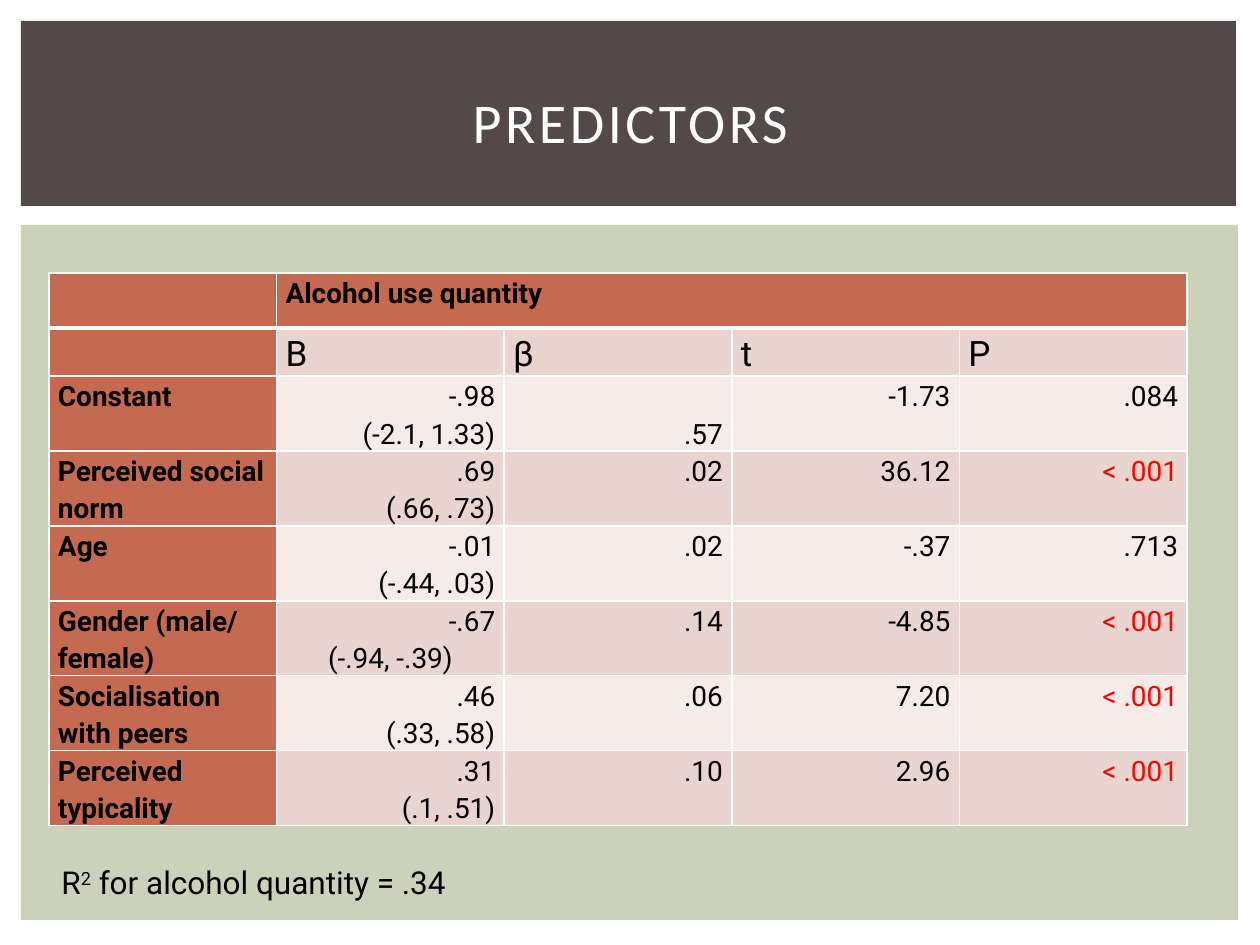
"""Build the slide with the table of predictors of alcohol use quantity."""
from dataclasses import dataclass

import lxml.etree
import pptx
import pptx.dml.color
import pptx.enum.shapes
import pptx.enum.text
import pptx.oxml.ns
import pptx.util

ALIGN = pptx.enum.text.PP_ALIGN
ANCHOR = pptx.enum.text.MSO_ANCHOR
PIXELS_PER_INCH = 126


@dataclass(frozen=True)
class Theme:
    heading_font: str = "Calibri"
    body_font: str = "Roboto"
    title_size: int = 32
    symbol_size: int = 20
    note_size: int = 18
    cell_size: int = 16
    white: str = "FFFFFF"
    black: str = "000000"
    red: str = "FF0000"
    band: str = "534949"
    panel: str = "CCD1B9"
    header: str = "C66951"
    dark_row: str = "EAD4D0"
    light_row: str = "F5EBE9"


@dataclass(frozen=True)
class Panel:
    left: int
    top: int
    width: int
    height: int
    color: str


@dataclass(frozen=True)
class Predictor:
    name: str
    b: str
    interval: str
    beta: str
    t: str
    p: str
    interval_align: ALIGN = ALIGN.RIGHT
    beta_anchor: ANCHOR = ANCHOR.TOP


THEME = Theme()
PANELS = [
    Panel(21, 225, 1217, 695, THEME.panel),
    Panel(21, 21, 1215, 185, THEME.band),
]
SYMBOLS = ["B", "β", "t", "P"]
PREDICTORS = [
    Predictor("Constant", "-.98", "(-2.1, 1.33)", ".57", "-1.73", ".084", beta_anchor=ANCHOR.BOTTOM),
    Predictor("Perceived social norm", ".69", "(.66, .73)", ".02", "36.12", "< .001"),
    Predictor("Age", "-.01", "(-.44, .03)", ".02", "-.37", ".713"),
    Predictor("Gender (male/ female)", "-.67", "(-.94, -.39)", ".14", "-4.85", "< .001",
              interval_align=ALIGN.CENTER),
    Predictor("Socialisation with peers", ".46", "(.33, .58)", ".06", "7.20", "< .001"),
    Predictor("Perceived typicality", ".31", "(.1, .51)", ".10", "2.96", "< .001"),
]
ROW_HEIGHTS = [55, 48] + [75] * len(PREDICTORS)


def px(length: int) -> pptx.util.Emu:
    return pptx.util.Emu(round(length * 914400 / PIXELS_PER_INCH))


def rgb(color: str) -> pptx.dml.color.RGBColor:
    return pptx.dml.color.RGBColor.from_string(color)


def write(para, text: str, *, size: int = THEME.cell_size, font: str = THEME.body_font,
          color: str = THEME.black, bold: bool = False, spacing: int = 0, baseline: int = 0) -> None:
    span = para.add_run()
    span.text = text
    span.font.size = pptx.util.Pt(size)
    span.font.name = font
    span.font.bold = bold
    span.font.color.rgb = rgb(color)
    properties = span._r.get_or_add_rPr()
    if spacing:
        properties.set("spc", str(spacing * 100))
    if baseline:
        properties.set("baseline", str(baseline * 1000))


def write_cell(cell, *lines: str, align: ALIGN = ALIGN.LEFT, **text_format) -> None:
    for index, line in enumerate(lines):
        para = cell.text_frame.add_paragraph() if index else cell.text_frame.paragraphs[0]
        para.alignment = align
        para.line_spacing = 1.15
        write(para, line, **text_format)


def draw_borders(cell, **widths: int) -> None:
    properties = cell._tc.get_or_add_tcPr()
    for index, side in enumerate("LRTB"):
        line = lxml.etree.Element(pptx.oxml.ns.qn(f"a:ln{side}"))
        line.set("w", str(pptx.util.Pt(widths.get(side, 1))))
        fill = lxml.etree.SubElement(line, pptx.oxml.ns.qn("a:solidFill"))
        lxml.etree.SubElement(fill, pptx.oxml.ns.qn("a:srgbClr")).set("val", THEME.white)
        properties.insert(index, line)


def style_cell(cell, row: int, column: int) -> None:
    cell.margin_left = cell.margin_right = px(9)
    cell.margin_top = cell.margin_bottom = 0
    body_fill = THEME.dark_row if row % 2 else THEME.light_row
    cell.fill.solid()
    cell.fill.fore_color.rgb = rgb(THEME.header if row == 0 or column == 0 else body_fill)
    draw_borders(cell, **{0: {"B": 3}, 1: {"T": 3}}.get(row, {}))


def draw_panel(page, panel: Panel) -> None:
    shape = page.shapes.add_shape(pptx.enum.shapes.MSO_SHAPE.RECTANGLE, px(panel.left),
                                  px(panel.top), px(panel.width), px(panel.height))
    shape.shadow.inherit = False
    shape.fill.solid()
    shape.fill.fore_color.rgb = rgb(panel.color)
    shape.line.fill.background()
    page.shapes.title.element.addprevious(shape.element)


def draw_title(page) -> None:
    title = page.shapes.title
    title.left, title.top, title.width, title.height = px(53), px(49), px(1155), px(145)
    title.text_frame.vertical_anchor = ANCHOR.MIDDLE
    para = title.text_frame.paragraphs[0]
    para.alignment = ALIGN.CENTER
    write(para, "PREDICTORS", size=THEME.title_size, font=THEME.heading_font,
          color=THEME.white, spacing=2)


def write_predictor(table, row: int, item: Predictor) -> None:
    name, b, beta, t, p = (table.cell(row, column) for column in range(5))
    write_cell(name, item.name, bold=True)
    write_cell(b, item.b, item.interval, align=ALIGN.RIGHT)
    b.text_frame.paragraphs[1].alignment = item.interval_align
    write_cell(beta, item.beta, align=ALIGN.RIGHT)
    beta.vertical_anchor = item.beta_anchor
    write_cell(t, item.t, align=ALIGN.RIGHT)
    write_cell(p, item.p, align=ALIGN.RIGHT,
               color=THEME.red if item.p.startswith("<") else THEME.black)


def draw_table(page) -> None:
    columns = len(SYMBOLS) + 1
    table = page.shapes.add_table(len(ROW_HEIGHTS), columns, px(49), px(273), px(1138),
                                  px(sum(ROW_HEIGHTS))).table
    for column in table.columns:
        column.width = px(1138) // columns
    for row, height in enumerate(ROW_HEIGHTS):
        table.rows[row].height = px(height)
        for column in range(columns):
            style_cell(table.cell(row, column), row, column)
    table.cell(0, 1).merge(table.cell(0, columns - 1))
    write_cell(table.cell(0, 1), "Alcohol use quantity", bold=True)
    for column, symbol in enumerate(SYMBOLS, 1):
        write_cell(table.cell(1, column), symbol, size=THEME.symbol_size)
    for row, item in enumerate(PREDICTORS, 2):
        write_predictor(table, row, item)


def draw_note(page) -> None:
    box = page.shapes.add_textbox(px(49), px(857), px(442), px(50))
    box.text_frame.word_wrap = False
    box.text_frame.auto_size = pptx.enum.text.MSO_AUTO_SIZE.SHAPE_TO_FIT_TEXT
    para = box.text_frame.paragraphs[0]
    write(para, "R", size=THEME.note_size)
    write(para, "2", size=THEME.note_size, baseline=30)
    write(para, " for alcohol quantity = .34", size=THEME.note_size)


def main() -> None:
    deck = pptx.Presentation()
    deck.slide_width, deck.slide_height = px(1260), px(945)
    page = deck.slides.add_slide(deck.slide_layouts.get_by_name("Title Only"))
    for panel in PANELS:
        draw_panel(page, panel)
    draw_title(page)
    draw_table(page)
    draw_note(page)
    deck.save("out.pptx")


if __name__ == "__main__":
    main()
